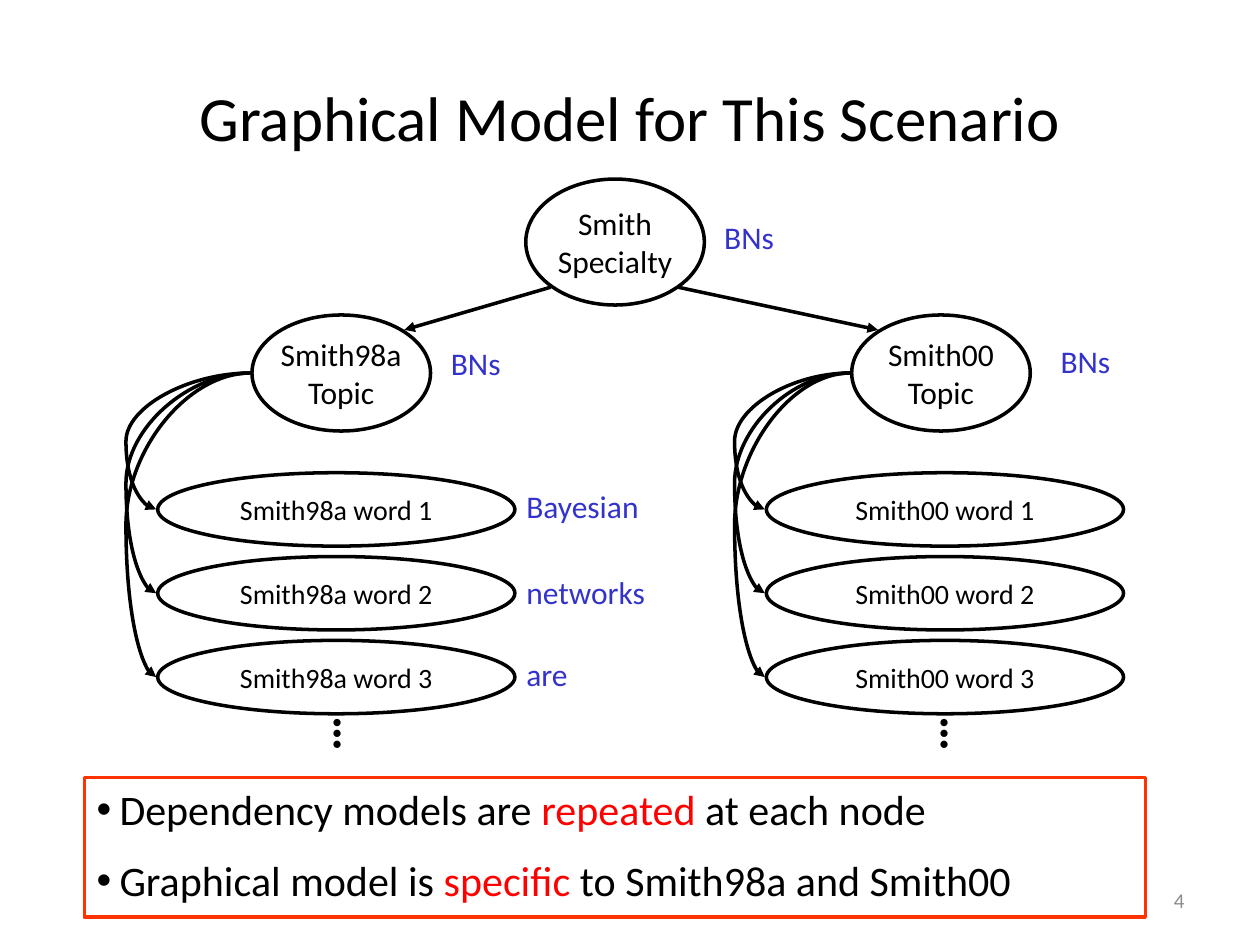
"""Build a slide showing a graphical model of two papers by one author."""
from dataclasses import dataclass

from lxml import etree
from pptx import Presentation
from pptx.dml.color import RGBColor
from pptx.enum.shapes import MSO_CONNECTOR, MSO_SHAPE
from pptx.enum.text import MSO_ANCHOR, PP_ALIGN
from pptx.oxml.ns import qn
from pptx.util import Cm, Pt

LEFT, CENTER, RIGHT = PP_ALIGN.LEFT, PP_ALIGN.CENTER, PP_ALIGN.RIGHT
TOP, MIDDLE = MSO_ANCHOR.TOP, MSO_ANCHOR.MIDDLE
STRAIGHT, CURVE = MSO_CONNECTOR.STRAIGHT, MSO_CONNECTOR.CURVE
OVAL, RECT = MSO_SHAPE.OVAL, MSO_SHAPE.RECTANGLE


@dataclass(frozen=True)
class Theme:
    font: str = "Calibri"
    black: RGBColor = RGBColor(0, 0, 0)
    white: RGBColor = RGBColor(255, 255, 255)
    value: RGBColor = RGBColor(0x33, 0x33, 0xCC)
    accent: RGBColor = RGBColor(255, 0, 0)
    frame: RGBColor = RGBColor(0xFF, 0x33, 0)
    muted: RGBColor = RGBColor(0x8C, 0x8C, 0x8C)
    title: int = 36
    dots: int = 28
    note: int = 24
    node: int = 18
    word: int = 16
    number: int = 12
    line: int = 2


T = Theme()


def write(sp, text, size, color=T.black, align=LEFT, anchor=TOP, wrap=True):
    tf = sp.text_frame
    tf.word_wrap = wrap
    tf.vertical_anchor = anchor
    tf.text = text
    p = tf.paragraphs[0]
    p.alignment = align
    for r in p.runs:
        r.font.name = T.font
        r.font.size = Pt(size)
        r.font.color.rgb = color
    return p


def outline(sp, color=T.black):
    sp.shadow.inherit = False
    sp.fill.solid()
    sp.fill.fore_color.rgb = T.white
    sp.line.color.rgb = color
    sp.line.width = Pt(T.line)


prs = Presentation()
prs.slide_width, prs.slide_height = Cm(25.4), Cm(19.05)
s = prs.slides.add_slide(prs.slide_layouts[6])

number = s.shapes.add_textbox(Cm(18.2), Cm(17.65), Cm(5.93), Cm(1.01))
write(number, "4", T.number, T.muted, RIGHT, MIDDLE)
title = s.shapes.add_textbox(Cm(1.27), Cm(0.76), Cm(22.86), Cm(3.18))
write(title, "Graphical Model for This Scenario", T.title, T.black, CENTER, MIDDLE)

papers = [("Smith98a", 5.08, 3.18, 6.48), ("Smith00", 17.17, 15.45, 18.72)]
word_w, word_h, word_top, word_step = 7.2, 1.48, 9.53, 1.69
topic_y = 7.52

nodes = [("Smith\vSpecialty", 10.6, 3.61, 3.6, 2.54, T.node)]
arrows = [(11.1, 5.79, 8.15, 6.65, None), (13.67, 5.79, 17.7, 6.65, None)]
for name, topic_x, word_x, dots_x in papers:
    nodes.append((f"{name}\vTopic", topic_x, 6.35, 3.6, 2.34, T.node))
    start, end, bend = topic_x - 0.03, word_x - 0.03, word_x - 0.64
    for i in range(3):
        top = word_top + i * word_step
        nodes.append((f"{name} word {i + 1}", word_x, top, word_w, word_h, T.word))
        adjust = round((start - bend) / (start - end) * 100000)
        arrows.append((start, topic_y, end, top + word_h / 2, adjust))

for x1, y1, x2, y2, adjust in arrows:
    kind = CURVE if adjust else STRAIGHT
    c = s.shapes.add_connector(kind, Cm(x1), Cm(y1), Cm(x2), Cm(y2))
    c.line.color.rgb = T.black
    c.line.width = Pt(T.line)
    spPr = c._element.spPr
    etree.SubElement(spPr.find(qn("a:ln")), qn("a:tailEnd"), type="triangle", w="med", len="med")
    etree.SubElement(spPr, qn("a:effectLst"))
    if adjust:
        guides = spPr.find(qn("a:prstGeom")).find(qn("a:avLst"))
        etree.SubElement(guides, qn("a:gd"), name="adj1", fmla=f"val {adjust}")

for text, x, y, w, h, size in nodes:
    sp = s.shapes.add_shape(OVAL, Cm(x), Cm(y), Cm(w), Cm(h))
    outline(sp)
    write(sp, text, size, align=CENTER, anchor=MIDDLE, wrap=False)

values = [
    ("BNs", 14.35, 4.27), ("BNs", 8.84, 6.81), ("BNs", 21.13, 6.78),
    ("Bayesian", 10.36, 9.7), ("networks", 10.36, 11.43), ("are", 10.36, 13.08),
]
for text, x, y in values:
    sp = s.shapes.add_textbox(Cm(x), Cm(y), Cm(3.43), Cm(1.09))
    write(sp, text, T.node, T.value)

for name, topic_x, word_x, dots_x in papers:
    sp = s.shapes.add_textbox(Cm(dots_x), Cm(14.1), Cm(1.27), Cm(1.45))
    sp.rotation = 90
    p = write(sp, "…", T.dots)
    p.space_before = Pt(T.dots / 2)
    p.runs[0].font.bold = True

notes = [
    ("Dependency models are ", "repeated", " at each node"),
    ("Graphical model is ", "specific", " to Smith98a and Smith00"),
]
box = s.shapes.add_shape(RECT, Cm(1.7), Cm(15.67), Cm(21.39), Cm(2.82))
outline(box, T.frame)
tf = box.text_frame
tf.word_wrap = True
tf.vertical_anchor = TOP
for i, parts in enumerate(notes):
    p = tf.add_paragraph() if i else tf.paragraphs[0]
    p.alignment = LEFT
    p.space_before = Pt(T.note / 2)
    pPr = p._p.get_or_add_pPr()
    pPr.set("marL", str(Cm(0.46)))
    pPr.set("indent", str(-Cm(0.46)))
    etree.SubElement(pPr, qn("a:buFont"), typeface="Arial")
    etree.SubElement(pPr, qn("a:buChar"), char="•")
    for text, color in zip(parts, (T.black, T.accent, T.black)):
        r = p.add_run()
        r.text = text
        r.font.name = T.font
        r.font.size = Pt(T.note)
        r.font.color.rgb = color

prs.save("out.pptx")
